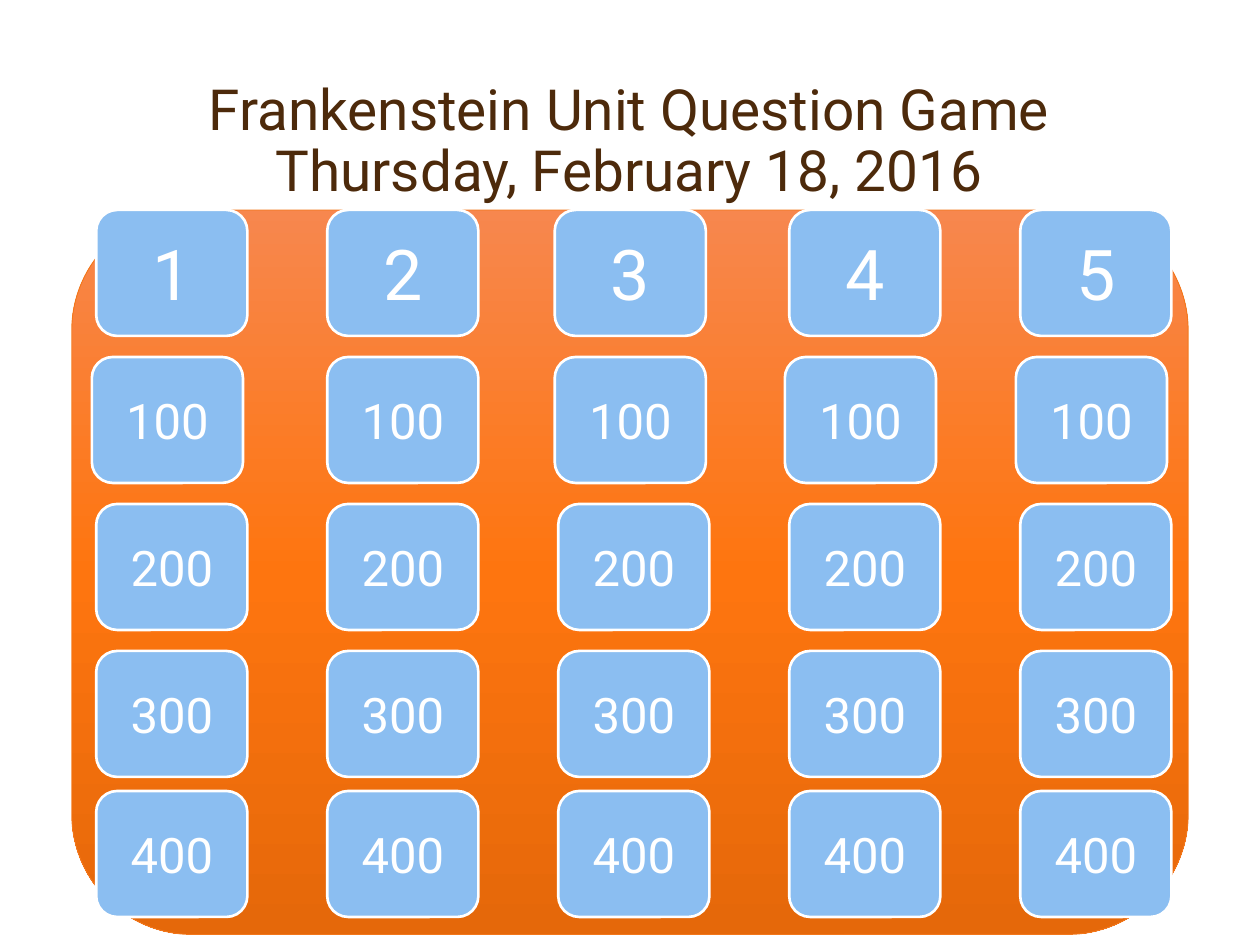
from lxml.etree import SubElement
from pptx import Presentation
from pptx.dml.color import RGBColor
from pptx.enum.shapes import MSO_SHAPE as Shape
from pptx.enum.text import MSO_ANCHOR as Anchor, PP_ALIGN as Align
from pptx.oxml.ns import qn
from pptx.util import Pt

LEFT, PITCH = 55, 132
TILE_W, TILE_H = 86.4, 72
# label, top, text size, small shift of each column
ROWS = [
    (None, 120, 40, (0, 0, -2, 0, 0)),
    ("100", 204, 28, (-2.5, 0, -2, -2.5, -2.5)),
    ("200", 288, 28, (0, 0, 0, 0, 0)),
    ("300", 372, 28, (0, 0, 0, 0, 0)),
    ("400", 452, 28, (0, 0, 0, 0, 0)),
]


def color(code):
    return RGBColor.from_string(code)


def write(shape, text, size, fill="FFFFFF", anchor=Anchor.MIDDLE, space=None):
    frame = shape.text_frame
    frame.word_wrap = True
    frame.vertical_anchor = anchor
    para = frame.paragraphs[0]
    para.text = text
    para.alignment = Align.CENTER
    para.line_spacing = space
    for run in para.runs:
        run.font.name = "Roboto"
        run.font.size = Pt(size)
        run.font.color.rgb = color(fill)


def add_round(slide, box, line, width):
    shape = slide.shapes.add_shape(Shape.ROUNDED_RECTANGLE, *map(Pt, box))
    shape.shadow.inherit = False
    shape.line.color.rgb = color(line)
    shape.line.width = Pt(width)
    return shape


def shade(shape, stops):
    """Fill from top to bottom with (percent, colour) stops."""
    shape.fill.gradient()
    shape.fill.gradient_angle = 270
    group = shape.element.spPr.find(".//" + qn("a:gsLst"))
    group.clear()
    for pos, code in stops:
        stop = SubElement(group, qn("a:gs"), pos=str(pos * 1000))
        SubElement(stop, qn("a:srgbClr"), val=code)


def add_title(slide):
    box = slide.shapes.add_textbox(Pt(62.5), Pt(24), Pt(594), Pt(96))
    write(box, "Frankenstein Unit Question Game\vThursday, February 18, 2016",
          32.4, fill="4D2A0B", anchor=Anchor.BOTTOM, space=0.9)


def add_board(slide):
    board = add_round(slide, (41, 120, 638, 414), "F3771A", 0.5)
    shade(board, [(0, "F7874E"), (50, "FE750F"), (100, "E5680A")])


def add_tile(slide, left, top, text, size):
    tile = add_round(slide, (left, top, TILE_W, TILE_H), "FFFFFF", 1.5)
    tile.fill.solid()
    tile.fill.fore_color.rgb = color("8BBEF1")
    write(tile, text, size)


def main():
    deck = Presentation()
    deck.slide_width, deck.slide_height = Pt(720), Pt(540)
    slide = deck.slides.add_slide(deck.slide_layouts[6])
    add_title(slide)
    add_board(slide)
    for label, top, size, shifts in ROWS:
        for col, shift in enumerate(shifts):
            left = LEFT + col * PITCH + shift
            add_tile(slide, left, top, label or str(col + 1), size)
    deck.save("out.pptx")


if __name__ == "__main__":
    main()
